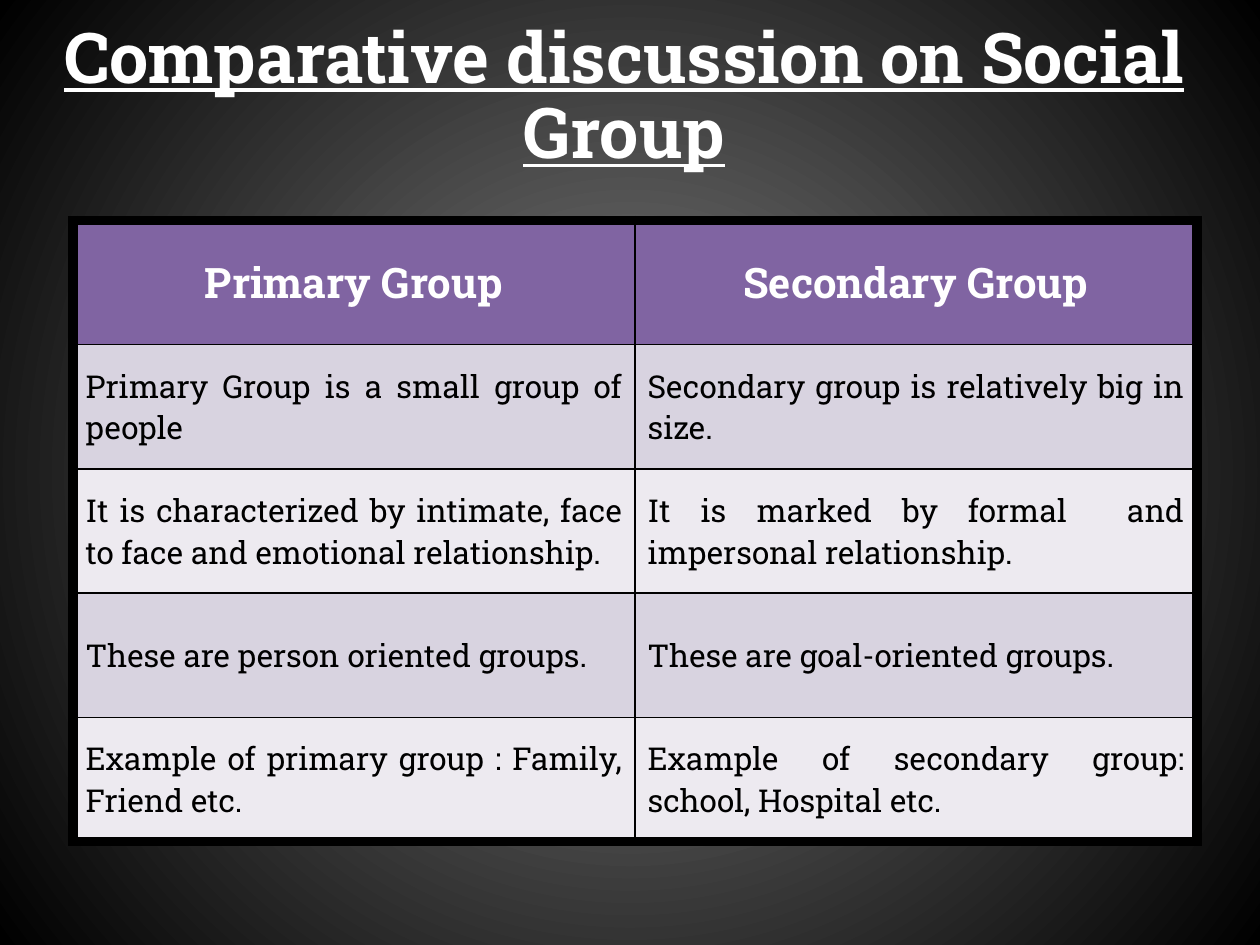
from lxml import etree
from pptx import Presentation
from pptx.dml.color import RGBColor
from pptx.enum import text
from pptx.oxml.ns import qn
from pptx.util import Inches, Pt

FONT = "Roboto Slab"
COLORS = {
    "white": "FFFFFF",
    "black": "000000",
    "glow": "7F7F7F",
    "header": "8064A2",
    "odd": "D8D3E0",
    "even": "EDEAF0",
}
TITLE = "Comparative discussion on Social Group"
ROWS = [
    ("Primary Group", "Secondary Group"),
    ("Primary Group is a small group of people",
     "Secondary group is relatively big in size."),
    ("It is characterized by intimate, face to face and emotional relationship.",
     "It is marked by formal  and impersonal relationship."),
    ("These are person oriented groups.", "These are goal-oriented groups."),
    ("Example of primary group : Family, Friend etc.",
     "Example of secondary group: school, Hospital etc."),
]
OUTER, INNER = 6, 1


def rgb(name):
    return RGBColor.from_string(COLORS[name])


def set_text(tf, words, size, color, align, bold=False, underline=False):
    tf.text = words
    p = tf.paragraphs[0]
    p.alignment = align
    font = p.runs[0].font
    font.name, font.size = FONT, Pt(size)
    font.bold, font.underline = bold, underline
    font.color.rgb = rgb(color)
    return p


def set_background(s):
    """Fill the slide with a gradient that darkens from the centre outwards."""
    fill = s.background.fill
    fill.gradient()
    for stop, color in zip(fill.gradient_stops, ("glow", "black")):
        stop.color.rgb = rgb(color)
    grad = s.element.find(".//" + qn("a:gradFill"))
    grad.remove(grad.find(qn("a:lin")))
    radial = etree.SubElement(grad, qn("a:path"), path="circle")
    etree.SubElement(radial, qn("a:fillToRect"),
                     {side: "50000" for side in "ltrb"})


def add_title(s):
    sp = s.shapes.title
    sp.left, sp.top = Inches(0.33), Inches(0.08)
    sp.width, sp.height = Inches(9.25), Inches(0.83)
    tf = sp.text_frame
    tf.word_wrap = True
    tf.auto_size = text.MSO_AUTO_SIZE.NONE
    tf.vertical_anchor = text.MSO_ANCHOR.TOP
    tf.margin_top = Inches(0.1)
    p = set_text(tf, TITLE, 40, "white", text.PP_ALIGN.CENTER,
                 bold=True, underline=True)
    p.line_spacing = 0.9


def set_borders(cell, widths):
    """Draw black borders; widths are points for left, right, top, bottom."""
    tc_pr = cell._tc.get_or_add_tcPr()
    for i, (side, width) in enumerate(zip("LRTB", widths)):
        ln = etree.Element(qn("a:ln" + side), w=str(Pt(width)))
        fill = etree.SubElement(ln, qn("a:solidFill"))
        etree.SubElement(fill, qn("a:srgbClr"), val=COLORS["black"])
        tc_pr.insert(i, ln)


def add_comparison_table(s):
    n_rows, n_cols = len(ROWS), len(ROWS[0])
    table = s.shapes.add_table(n_rows, n_cols, Inches(0.58), Inches(1.75),
                               Inches(8.92), Inches(4.93)).table
    for i, row in enumerate(ROWS):
        for j, words in enumerate(row):
            cell = table.cell(i, j)
            cell.vertical_anchor = text.MSO_ANCHOR.MIDDLE
            cell.fill.solid()
            if i == 0:
                cell.fill.fore_color.rgb = rgb("header")
                set_text(cell.text_frame, words, 24, "white",
                         text.PP_ALIGN.CENTER, bold=True)
            else:
                cell.fill.fore_color.rgb = rgb("odd" if i % 2 else "even")
                set_text(cell.text_frame, words, 18, "black",
                         text.PP_ALIGN.JUSTIFY)
            on_edge = (j == 0, j == n_cols - 1, i == 0, i == n_rows - 1)
            set_borders(cell, [OUTER if edge else INNER for edge in on_edge])


def main():
    prs = Presentation()
    prs.slide_width, prs.slide_height = Inches(10), Inches(7.5)
    s = prs.slides.add_slide(prs.slide_layouts.get_by_name("Title Only"))
    set_background(s)
    add_title(s)
    add_comparison_table(s)
    prs.save("out.pptx")


if __name__ == "__main__":
    main()
